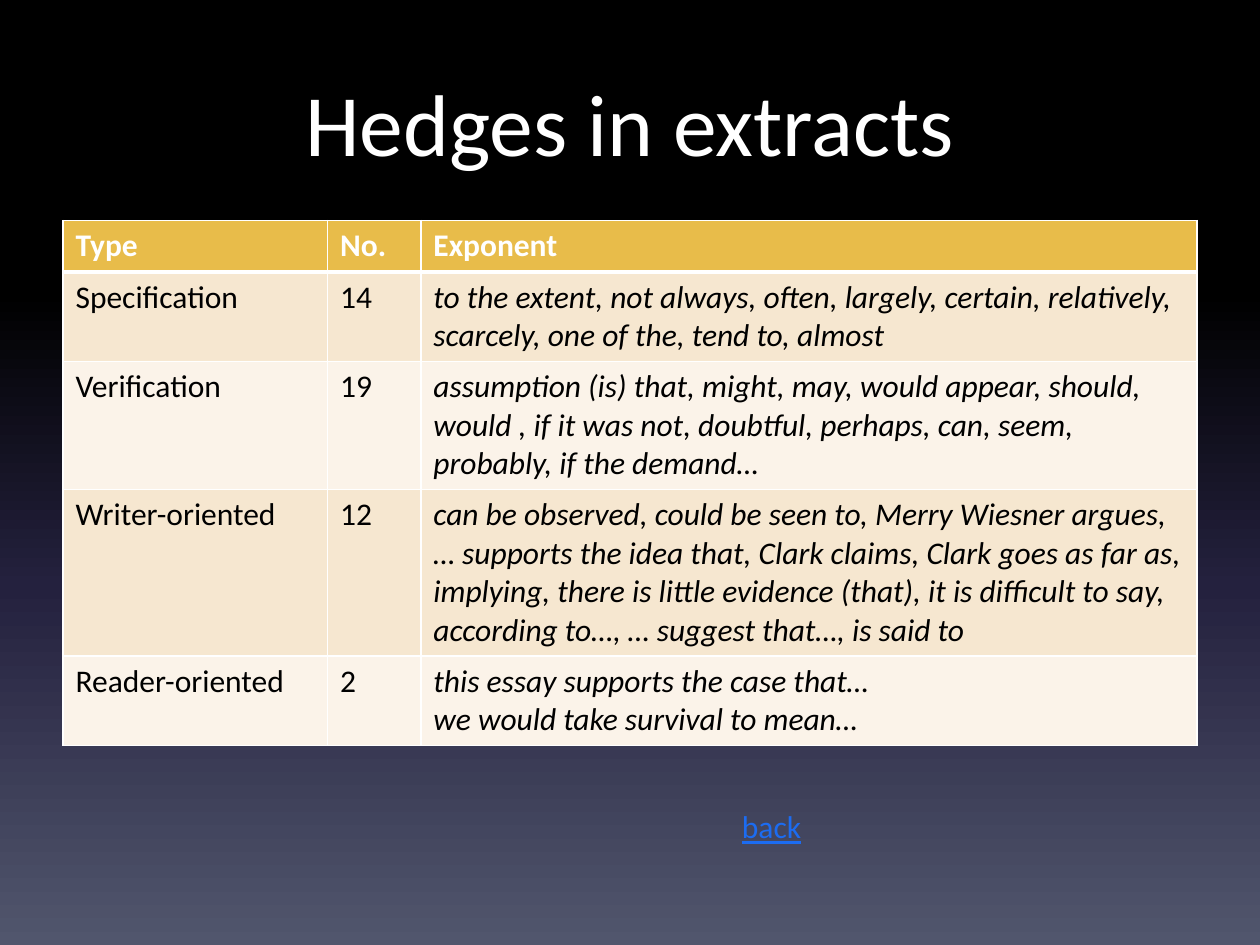
import copy
from dataclasses import dataclass

import pptx
import pptx.dml.color
import pptx.enum.text
import pptx.oxml
import pptx.oxml.ns
import pptx.util

Inches = pptx.util.Inches

HEADINGS = ["Type", "No.", "Exponent"]
HEDGES = [
    ["Specification", "14",
     "to the extent, not always, often, largely, certain, relatively, "
     "scarcely, one of the, tend to, almost"],
    ["Verification", "19",
     "assumption (is) that, might, may, would appear, should, would , "
     "if it was not, doubtful, perhaps, can, seem, probably, if the demand…"],
    ["Writer-oriented", "12",
     "can be observed, could be seen to, Merry Wiesner argues, … supports "
     "the idea that, Clark claims, Clark goes as far as, implying, there is "
     "little evidence (that), it is difficult to say, according to…, "
     "… suggest that…, is said to"],
    ["Reader-oriented", "2",
     "this essay supports the case that…\nwe would take survival to mean…"],
]


@dataclass(frozen=True)
class Theme:
    """Colours, font and type sizes of the slide."""

    font: str = "Calibri"
    title_size: int = 50
    body_size: int = 18
    light: str = "FFFFFF"
    dark: str = "000000"
    link: str = "1C6CF1"
    header: str = "E8BC4A"
    bands: tuple = ("F6E7D0", "FBF3E9")
    backdrop: tuple = ((0, "000000"), (31, "000000"), (62, "24213E"), (100, "51566D"))
    rule: int = 1
    header_rule: int = 3


class SlideBuilder:
    """Adds styled elements to the current slide."""

    def __init__(self, slide, theme):
        self.slide = slide
        self.theme = theme

    def rgb(self, value):
        return pptx.dml.color.RGBColor.from_string(value)

    def style(self, frame, size, color, bold=False, italic=False, underline=False):
        for paragraph in frame.paragraphs:
            for run in paragraph.runs:
                font = run.font
                font.name, font.size = self.theme.font, pptx.util.Pt(size)
                font.bold, font.italic, font.underline = bold, italic, underline
                font.color.rgb = self.rgb(color)

    def background(self):
        fill = self.slide.background.fill
        fill.gradient()
        fill.gradient_angle = 270
        first = fill.gradient_stops[0]
        first.color.rgb = self.rgb(self.theme.dark)
        stops = fill._fill._gradFill.find(pptx.oxml.ns.qn("a:gsLst"))
        template = copy.deepcopy(stops[0])
        for stop in list(stops):
            stops.remove(stop)
        for position, color in self.theme.backdrop:
            stop = copy.deepcopy(template)
            stop.set("pos", str(position * 1000))
            stop[0].set("val", color)
            stops.append(stop)

    def title(self, text, left, top, width, height):
        title = self.slide.shapes.title
        title.left, title.top = Inches(left), Inches(top)
        title.width, title.height = Inches(width), Inches(height)
        frame = title.text_frame
        frame.text = text
        frame.vertical_anchor = pptx.enum.text.MSO_ANCHOR.TOP
        frame.paragraphs[0].alignment = pptx.enum.text.PP_ALIGN.CENTER
        self.style(frame, self.theme.title_size, self.theme.light)

    def borders(self, cell, widths):
        properties = cell._tc.get_or_add_tcPr()
        for index, (side, width) in enumerate(widths.items()):
            properties.insert(index, pptx.oxml.parse_xml(
                f'<a:ln{side} {pptx.oxml.ns.nsdecls("a")} w="{pptx.util.Pt(width)}">'
                f'<a:solidFill><a:srgbClr val="{self.theme.light}"/></a:solidFill>'
                f'</a:ln{side}>'))

    def table(self, rows, left, top, column_widths, row_height):
        theme = self.theme
        table = self.slide.shapes.add_table(
            len(rows), len(column_widths), Inches(left), Inches(top),
            Inches(sum(column_widths)), Inches(row_height * len(rows))).table
        for column, width in zip(table.columns, column_widths):
            column.width = Inches(width)
        for r, row in enumerate(rows):
            is_header = r == 0
            table.rows[r].height = Inches(row_height)
            for c, text in enumerate(row):
                cell = table.cell(r, c)
                cell.text_frame.text = text
                self.style(cell.text_frame, theme.body_size,
                           theme.light if is_header else theme.dark,
                           bold=is_header,
                           italic=not is_header and c == len(row) - 1)
                cell.fill.solid()
                cell.fill.fore_color.rgb = self.rgb(
                    theme.header if is_header else theme.bands[(r - 1) % 2])
                self.borders(cell, {
                    "L": theme.rule, "R": theme.rule,
                    "T": theme.header_rule if r == 1 else theme.rule,
                    "B": theme.header_rule if is_header else theme.rule})

    def link_label(self, text, left, top, width, height):
        label = self.slide.shapes.add_textbox(
            Inches(left), Inches(top), Inches(width), Inches(height))
        frame = label.text_frame
        frame.word_wrap = True
        frame.text = text
        self.style(frame, self.theme.body_size, self.theme.link, underline=True)


def main():
    deck = pptx.Presentation()
    deck.slide_width, deck.slide_height = Inches(10), Inches(7.5)
    builder = SlideBuilder(deck.slides.add_slide(deck.slide_layouts[5]), Theme())
    builder.background()
    builder.title("Hedges in extracts", 0.5, 0.5, 9, 1.25)
    builder.table([HEADINGS] + HEDGES, 0.5, 1.75, [2.1, 0.74, 6.16], 0.41)
    builder.link_label("back", 5.79, 6.36, 2.23, 0.4)
    deck.save("out.pptx")


if __name__ == "__main__":
    main()
